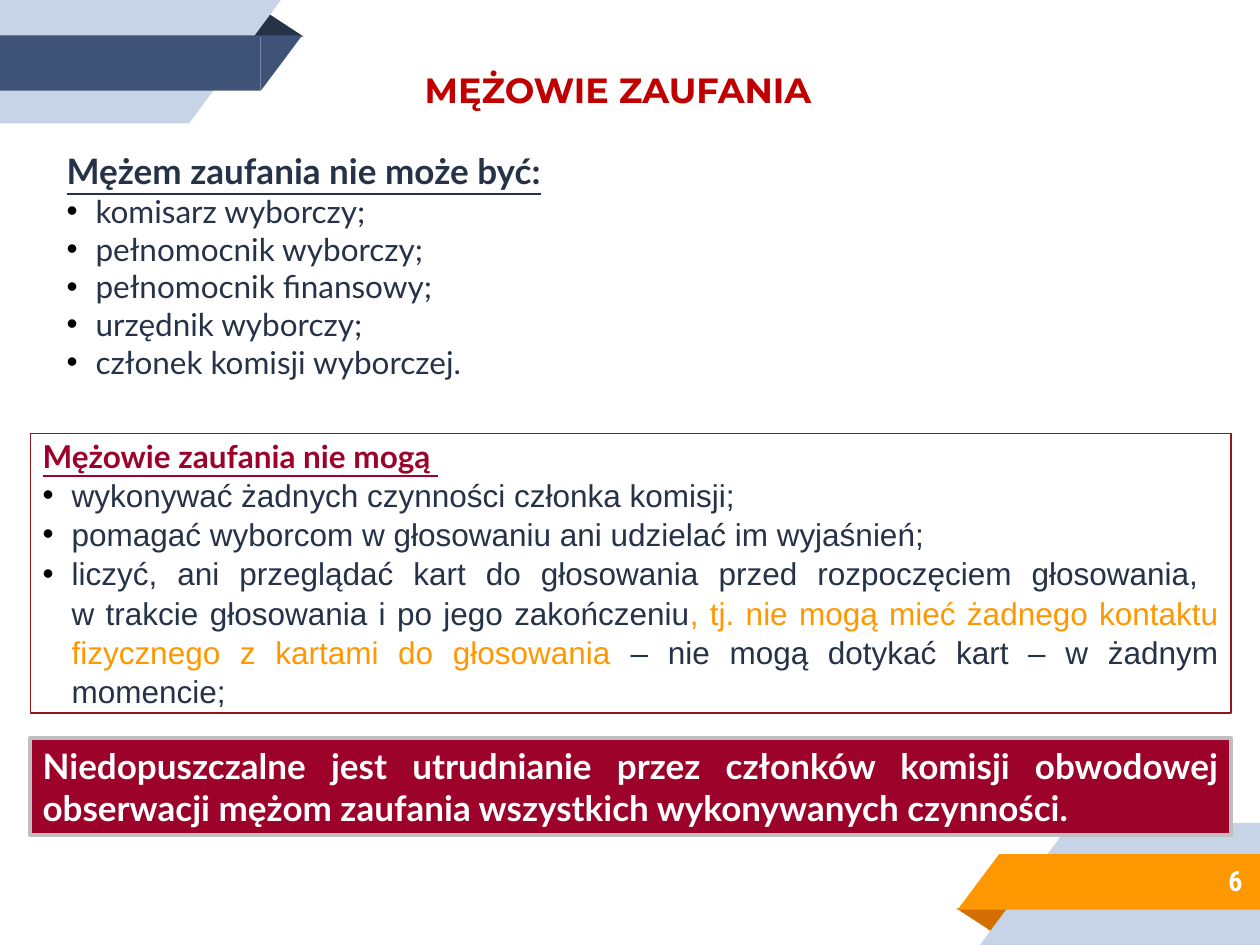
from pptx import Presentation
from pptx import util as u
from pptx.dml.color import RGBColor
from pptx.enum import shapes, text
from pptx.oxml import parse_xml
from pptx.oxml.ns import nsdecls

COLORS = {
    "navy": "263248", "blue": "3F5378", "pale": "C7D3E6", "orange": "FF9800",
    "rust": "D26F00", "red": "C00000", "crimson": "9D032A", "border": "90181B",
    "grey": "BFBFBF", "white": "FFFFFF", "black": "000000",
}
WIDTH, HEIGHT = 10, 7.5
MARGIN, PANEL_WIDTH = 0.024, 0.953
KIND = shapes.MSO_SHAPE
ALIGN = text.PP_ALIGN
ANCHOR = text.MSO_ANCHOR

RIBBON = [
    (KIND.ISOSCELES_TRIANGLE, (0.198, 0.013, 0.043, 0.025), "fold"),
    (KIND.RECTANGLE, (0, 0, 0.15, 0.13), "back"),
    (KIND.RIGHT_TRIANGLE, (0.15, 0, 0.073, 0.13), "back"),
    (KIND.RECTANGLE, (0, 0.037, 0.207, 0.059), "front"),
    (KIND.RIGHT_TRIANGLE, (0.207, 0.037, 0.033, 0.059), "front"),
]
EXCLUDED = [
    "komisarz wyborczy;", "pełnomocnik wyborczy;", "pełnomocnik finansowy;",
    "urzędnik wyborczy;", "członek komisji wyborczej.",
]
FORBIDDEN = [
    "wykonywać żadnych czynności członka komisji;",
    "pomagać wyborcom w głosowaniu ani udzielać im wyjaśnień;",
]
BALLOT_RULE = [
    ("liczyć, ani przeglądać kart do głosowania przed rozpoczęciem głosowania, ", "navy"),
    ("\n", None),
    ("w trakcie głosowania i po jego zakończeniu", "navy"),
    (", tj. nie mogą mieć żadnego kontaktu fizycznego z kartami do głosowania", "orange"),
    (" – nie mogą dotykać kart – w żadnym momencie;", "navy"),
]


class Deck:
    def __init__(self):
        self.file = Presentation()
        self.file.slide_width = u.Inches(WIDTH)
        self.file.slide_height = u.Inches(HEIGHT)
        self.slide = self.file.slides.add_slide(self.file.slide_layouts[5])

    def color(self, name):
        return RGBColor.from_string(COLORS[name])

    def box(self, area):
        return [u.Inches(round(share * side, 2))
                for share, side in zip(area, (WIDTH, HEIGHT) * 2)]

    def font(self, run, size, face, color, bold=False, underline=False):
        run.font.size, run.font.name = u.Pt(size), face
        run.font.bold, run.font.underline = bold, underline
        run.font.color.rgb = self.color(color)

    def shape(self, kind, area, fill=None, line=None, weight=0.75):
        shape = self.slide.shapes.add_shape(kind, *self.box(area))
        shape.shadow.inherit = False
        if fill:
            shape.fill.solid()
            shape.fill.fore_color.rgb = self.color(fill)
        else:
            shape.fill.background()
        if line:
            shape.line.color.rgb = self.color(line)
            shape.line.width = u.Pt(weight)
        else:
            shape.line.fill.background()
        return shape

    def ribbon(self, colors, at_end=False):
        for kind, (left, top, width, height), part in RIBBON:
            if at_end:
                left, top = 1 - left - width, 1 - top - height
            piece = self.shape(kind, (left, top, width, height), colors[part])
            if part == "fold":
                piece.adjustments[0] = 0.324
                piece.rotation = 180 if at_end else 0
            else:
                piece.rotation = 0 if at_end else 180
                piece._element.spPr.xfrm.set("flipH", "1")

    def textbox(self, area):
        return self.slide.shapes.add_textbox(*self.box(area))

    def frame(self, holder, anchor):
        frame = holder.text_frame
        frame.word_wrap = True
        frame.auto_size = text.MSO_AUTO_SIZE.NONE
        frame.vertical_anchor = anchor
        return frame

    def line(self, frame, words, align, *style):
        first = frame.paragraphs[0]
        paragraph = frame.add_paragraph() if first.runs else first
        paragraph.text = words
        paragraph.alignment = align
        for run in paragraph.runs:
            self.font(run, *style)
        return paragraph

    def bullet(self, paragraph):
        props = paragraph._p.get_or_add_pPr()
        props.set("marL", str(u.Inches(0.23)))
        props.set("indent", str(-u.Inches(0.23)))
        for xml in (
            f'<a:buClr {nsdecls("a")}><a:srgbClr val="{COLORS["black"]}"/></a:buClr>',
            f'<a:buFont {nsdecls("a")} typeface="Arial"/>',
            f'<a:buChar {nsdecls("a")} char="•"/>',
        ):
            props.append(parse_xml(xml))

    def title(self, words, area, *style):
        title = self.slide.shapes.title
        title.left, title.top, title.width, title.height = self.box(area)
        self.line(self.frame(title, ANCHOR.TOP), words, ALIGN.LEFT, *style)


def main():
    deck = Deck()
    deck.ribbon({"fold": "navy", "back": "pale", "front": "blue"})
    deck.ribbon({"fold": "rust", "back": "pale", "front": "orange"}, at_end=True)
    deck.title("MĘŻOWIE ZAUFANIA", (0.327, 0.065, 0.496, 0.059),
               20, "Montserrat", "red", True)

    excluded = deck.frame(deck.textbox((0.043, 0.151, 0.551, 0.26)), ANCHOR.MIDDLE)
    deck.line(excluded, "Mężem zaufania nie może być:", ALIGN.JUSTIFY,
              20, "Lato", "navy", True, True)
    for person in EXCLUDED:
        deck.bullet(deck.line(excluded, person, ALIGN.JUSTIFY, 18, "Lato", "navy"))

    panel = deck.shape(KIND.RECTANGLE, (MARGIN, 0.459, PANEL_WIDTH, 0.296), line="border")
    forbidden = deck.frame(panel, ANCHOR.MIDDLE)
    deck.line(forbidden, "Mężowie zaufania nie mogą ", ALIGN.LEFT,
              18, "Lato", "crimson", True, True)
    rules = [deck.line(forbidden, rule, ALIGN.LEFT, 18, "Arial", "navy")
             for rule in FORBIDDEN]
    ballots = forbidden.add_paragraph()
    ballots.alignment = ALIGN.JUSTIFY
    for words, color in BALLOT_RULE:
        if color is None:
            ballots.add_line_break()
            continue
        run = ballots.add_run()
        run.text = words
        deck.font(run, 18, "Arial", color)
    for rule in rules + [ballots]:
        rule.line_spacing = 1.04
        deck.bullet(rule)

    warning = deck.shape(KIND.RECTANGLE, (MARGIN, 0.781, PANEL_WIDTH, 0.103),
                         "crimson", "grey", 2.25)
    deck.line(deck.frame(warning, ANCHOR.TOP),
              "Niedopuszczalne jest utrudnianie przez członków komisji obwodowej "
              "obserwacji mężom zaufania wszystkich wykonywanych czynności.",
              ALIGN.JUSTIFY, 20, "Lato", "white", True)

    number = deck.frame(deck.textbox((0.833, 0.901, 0.163, 0.061)), ANCHOR.MIDDLE)
    number.margin_top = number.margin_bottom = u.Inches(0.1)
    deck.line(number, "6", ALIGN.RIGHT, 16, "Roboto Condensed", "white", True)

    deck.file.save("out.pptx")


if __name__ == "__main__":
    main()
